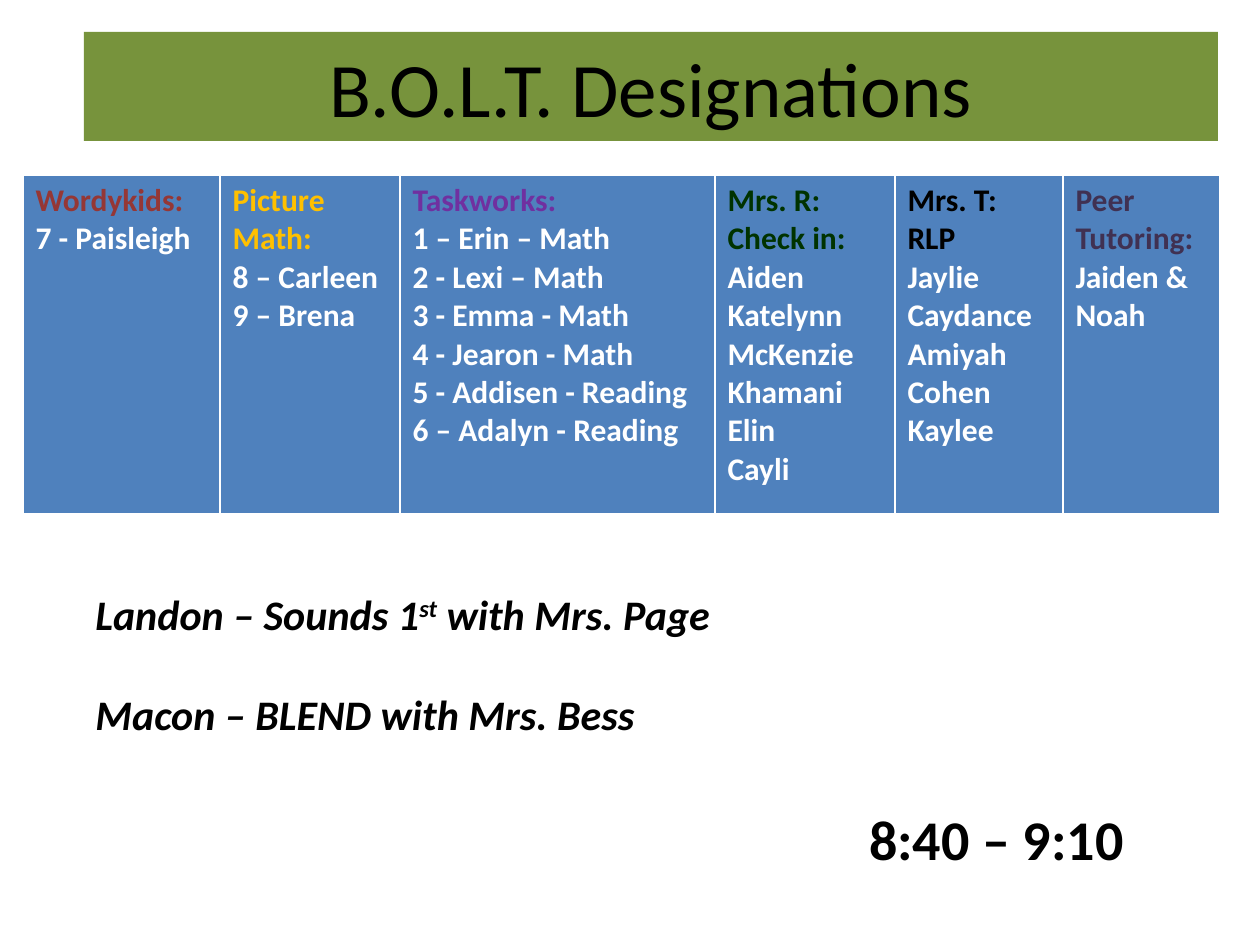
from pptx import Presentation
from pptx.dml.color import RGBColor
from pptx.enum.text import MSO_ANCHOR, MSO_AUTO_SIZE, PP_ALIGN
from pptx.util import Pt

CENTER, LEFT = PP_ALIGN.CENTER, PP_ALIGN.LEFT
MIDDLE = MSO_ANCHOR.MIDDLE
GROW = MSO_AUTO_SIZE.SHAPE_TO_FIT_TEXT

PX = 914400 / 126  # EMU per px
FONT = "Calibri"
GREEN, BLUE, WHITE, BLACK = "77933C", "4F81BD", "FFFFFF", "000000"

TITLE = "B.O.L.T. Designations"
# Column width, heading colour, heading lines, entries
GROUPS = [
    (197, "953735", ["Wordykids:"], ["7 - Paisleigh"]),
    (180, "FFC000", ["Picture Math:"], ["8 – Carleen", "9 – Brena"]),
    (315, "7030A0", ["Taskworks:"],
     ["1 – Erin – Math", "2 - Lexi – Math", "3 - Emma - Math",
      "4 - Jearon - Math", "5 - Addisen - Reading", "6 – Adalyn - Reading"]),
    (180, "003300", ["Mrs. R:", "Check in:"],
     ["Aiden", "Katelynn", "McKenzie", "Khamani", "Elin", "Cayli"]),
    (168, BLACK, ["Mrs. T:", "RLP"],
     ["Jaylie", "Caydance", "Amiyah", "Cohen", "Kaylee"]),
    (157, "403152", ["Peer Tutoring:"], ["Jaiden & Noah"]),
]
TABLE_LEFT, TABLE_TOP, TABLE_HEIGHT = 23, 175, 339
# Box, (text, is superscript) pieces, size, italic, alignment
NOTES = [
    ((819, 798, 368, 81), [("8:40 – 9:10 ", False)], 32, False, CENTER),
    ((83, 582, 1144, 63),
     [("Landon – Sounds 1", False), ("st", True), (" with Mrs. Page", False)],
     24, True, LEFT),
    ((83, 682, 609, 63), [("Macon – BLEND with Mrs. Bess", False)], 24, True, LEFT),
]


def emu(*lengths):
    return [round(length * PX) for length in lengths]


def rgb(value):
    return RGBColor.from_string(value)


def style(run, size, color, bold=False, italic=False):
    font = run.font
    font.name, font.size = FONT, Pt(size)
    font.bold, font.italic = bold, italic
    font.color.rgb = rgb(color)


prs = Presentation()
prs.slide_width, prs.slide_height = emu(1260, 945)
slide = prs.slides.add_slide(prs.slide_layouts[5])

# Title banner
title = slide.shapes.title
title.left, title.top, title.width, title.height = emu(84, 32, 1134, 109)
title.fill.solid()
title.fill.fore_color.rgb = rgb(GREEN)
title.text_frame.text = TITLE
title.text_frame.vertical_anchor = MIDDLE
title.text_frame.paragraphs[0].alignment = CENTER
style(title.text_frame.paragraphs[0].runs[0], 44, BLACK)

# Time and extra notes
for box, pieces, size, italic, alignment in NOTES:
    frame = slide.shapes.add_textbox(*emu(*box)).text_frame
    frame.word_wrap = True
    frame.auto_size = GROW
    paragraph = frame.paragraphs[0]
    paragraph.alignment = alignment
    for text, superscript in pieces:
        run = paragraph.add_run()
        run.text = text
        style(run, size, BLACK, bold=True, italic=italic)
        if superscript:
            run.font._element.set("baseline", "30000")

# Group table
table_width = sum(group[0] for group in GROUPS)
table = slide.shapes.add_table(
    1, len(GROUPS), *emu(TABLE_LEFT, TABLE_TOP, table_width, TABLE_HEIGHT)).table
for index, (width, color, heading, entries) in enumerate(GROUPS):
    table.columns[index].width = emu(width)[0]
    cell = table.cell(0, index)
    cell.fill.solid()
    cell.fill.fore_color.rgb = rgb(BLUE)
    cell.text_frame.text = "\n".join(heading + entries)
    for row, paragraph in enumerate(cell.text_frame.paragraphs):
        line_color = color if row < len(heading) else WHITE
        style(paragraph.runs[0], 18, line_color, bold=True)

prs.save("out.pptx")
